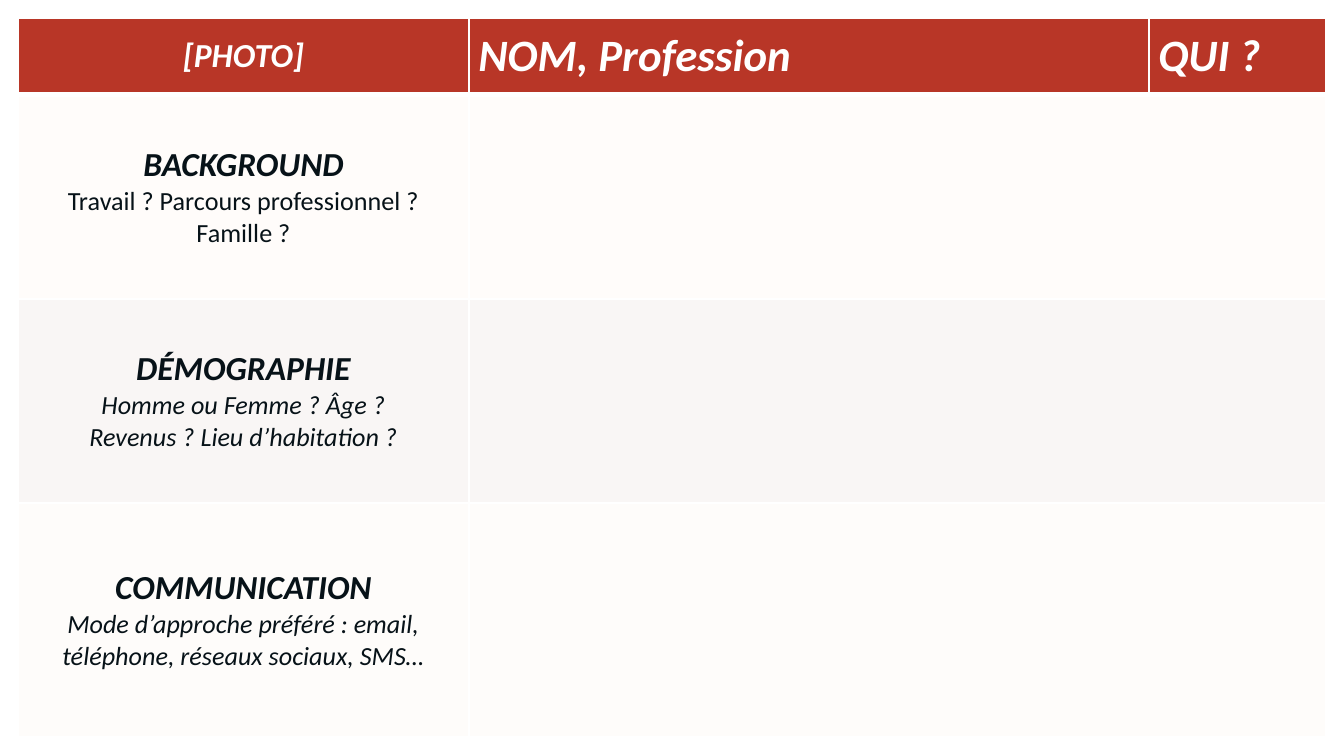
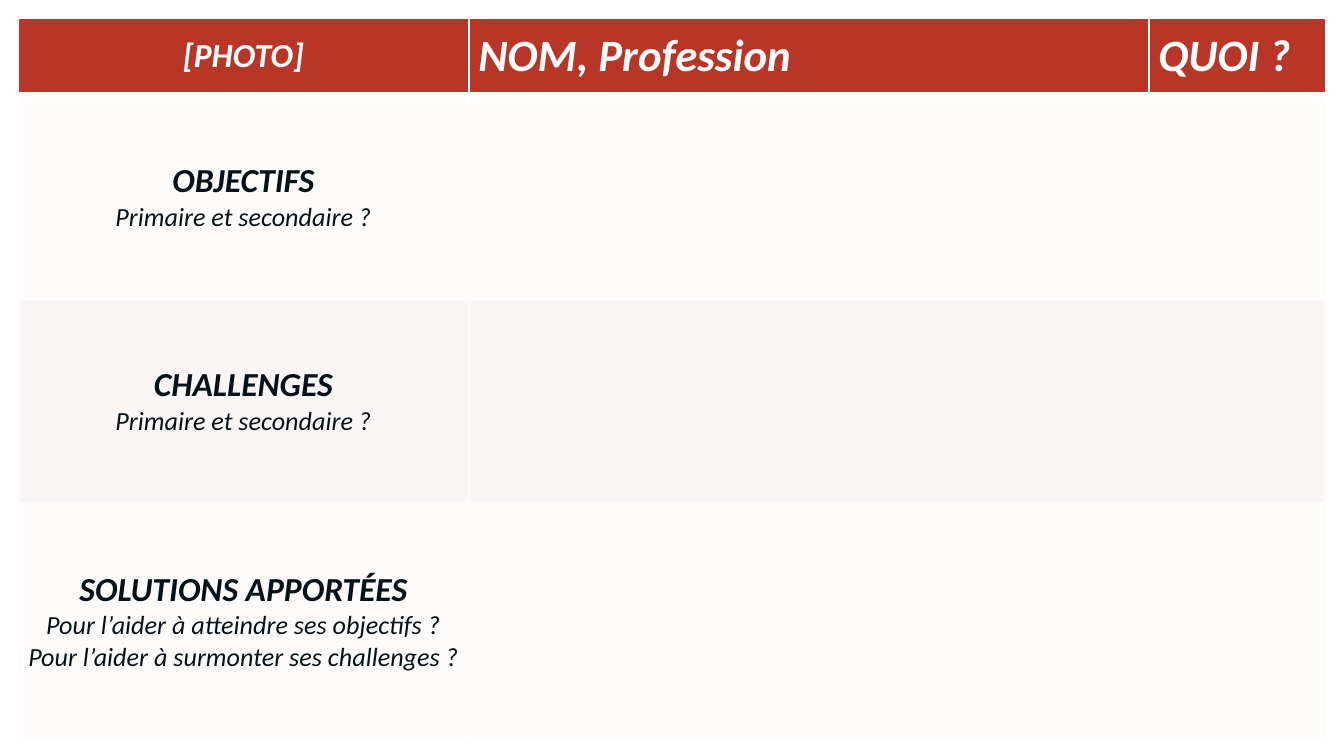
from dataclasses import dataclass

from lxml import etree
from pptx import Presentation
from pptx.dml.color import RGBColor
from pptx.enum import text
from pptx.oxml import ns
from pptx.util import Pt


@dataclass(frozen=True)
class Theme:
    font: str = "Calibri"
    white: str = "FFFFFF"
    red: str = "B83627"
    ink: str = "071218"
    ivory: str = "FEFCFA"
    cream: str = "FFFCFA"
    blush: str = "F9F6F5"
    rose: str = "FAF6F5"
    banner_size: float = 24
    heading_size: float = 18
    hint_size: float = 14
    rule: float = 1
    header_rule: float = 3
    inset: float = 5.04


@dataclass(frozen=True)
class Box:
    left: float
    top: float
    width: float
    height: float


@dataclass(frozen=True)
class Topic:
    heading: str
    hints: tuple
    fill: str
    italic_hints: bool = True


THEME = Theme()
PAGE_WIDTH, PAGE_HEIGHT = 720, 405
MARGIN = 9.6
LABEL_WIDTH, QUESTION_WIDTH = 241.6, 95
HEADER_HEIGHT, TOPIC_HEIGHT = 41, 109.5

PERSONA_PAGES = [
    ("QUI ?", 385.2, [
        Topic("BACKGROUND", ("Travail ? Parcours professionnel ? Famille ?",),
              THEME.cream, italic_hints=False),
        Topic("DÉMOGRAPHIE", ("Homme ou Femme ? Âge ?\nRevenus ? Lieu d’habitation ?",),
              THEME.blush),
        Topic("COMMUNICATION",
              ("Mode d’approche préféré : email, téléphone, réseaux sociaux, SMS…",),
              THEME.ivory),
    ]),
    ("QUOI ?", 386.6, [
        Topic("OBJECTIFS", ("Primaire et secondaire ?",), THEME.ivory),
        Topic("CHALLENGES", ("Primaire et secondaire ?",), THEME.rose),
        Topic("SOLUTIONS APPORTÉES",
              ("Pour l’aider à atteindre ses objectifs ?",
               "Pour l’aider à surmonter ses challenges ?"), THEME.ivory),
    ]),
]


def write(para, content, *, size, color, bold=True, italic=True, centered=True):
    para.alignment = text.PP_ALIGN.CENTER if centered else text.PP_ALIGN.LEFT
    for number, line in enumerate(content.split("\n")):
        if number:
            para.add_line_break()
        span = para.add_run()
        span.text = line
        span.font.name = THEME.font
        span.font.size = Pt(size)
        span.font.bold = bold
        span.font.italic = italic
        span.font.color.rgb = RGBColor.from_string(color)


def style_cell(cell, fill, top=THEME.rule, bottom=THEME.rule):
    cell.vertical_anchor = text.MSO_ANCHOR.MIDDLE
    cell.margin_left = cell.margin_right = Pt(THEME.inset)
    cell.margin_top = cell.margin_bottom = Pt(THEME.inset)
    cell.fill.solid()
    cell.fill.fore_color.rgb = RGBColor.from_string(fill)
    properties = cell._tc.get_or_add_tcPr()
    edges = {"a:lnL": THEME.rule, "a:lnR": THEME.rule, "a:lnT": top, "a:lnB": bottom}
    for position, (tag, weight) in enumerate(edges.items()):
        line = etree.Element(ns.qn(tag), w=str(Pt(weight)))
        paint = etree.SubElement(line, ns.qn("a:solidFill"))
        etree.SubElement(paint, ns.qn("a:srgbClr"), val=THEME.white)
        properties.insert(position, line)


def add_grid(page, box, topic_count):
    columns = [LABEL_WIDTH, box.width - LABEL_WIDTH - QUESTION_WIDTH, QUESTION_WIDTH]
    rows = [HEADER_HEIGHT] + [TOPIC_HEIGHT] * (topic_count - 1)
    rows.append(box.height - sum(rows))
    table = page.shapes.add_table(
        len(rows), len(columns),
        Pt(box.left), Pt(box.top), Pt(box.width), Pt(box.height)).table
    for column, width in zip(table.columns, columns):
        column.width = Pt(width)
    for row, height in zip(table.rows, rows):
        row.height = Pt(height)
    return table


def fill_header(table, question):
    labels = [("[PHOTO]", THEME.heading_size, True),
              ("NOM, Profession", THEME.banner_size, False),
              (question, THEME.banner_size, False)]
    for column, (label, size, centered) in enumerate(labels):
        cell = table.cell(0, column)
        style_cell(cell, THEME.red, bottom=THEME.header_rule)
        write(cell.text_frame.paragraphs[0], label,
              size=size, color=THEME.white, centered=centered)


def fill_topic(table, row, topic):
    top = THEME.header_rule if row == 1 else THEME.rule
    for column in range(3):
        style_cell(table.cell(row, column), topic.fill, top=top)
    table.cell(row, 1).merge(table.cell(row, 2))
    frame = table.cell(row, 0).text_frame
    write(frame.paragraphs[0], topic.heading, size=THEME.heading_size, color=THEME.ink)
    for hint in topic.hints:
        write(frame.add_paragraph(), hint, size=THEME.hint_size, color=THEME.ink,
              bold=False, italic=topic.italic_hints)


def add_persona_page(deck, box, question, topics):
    page = deck.slides.add_slide(deck.slide_layouts[6])
    table = add_grid(page, box, len(topics))
    fill_header(table, question)
    for row, topic in enumerate(topics, start=1):
        fill_topic(table, row, topic)


def main():
    deck = Presentation()
    deck.slide_width, deck.slide_height = Pt(PAGE_WIDTH), Pt(PAGE_HEIGHT)
    for question, height, topics in PERSONA_PAGES:
        box = Box(MARGIN, MARGIN, PAGE_WIDTH - 2 * MARGIN, height)
        add_persona_page(deck, box, question, topics)
    deck.save("out.pptx")


if __name__ == "__main__":
    main()
